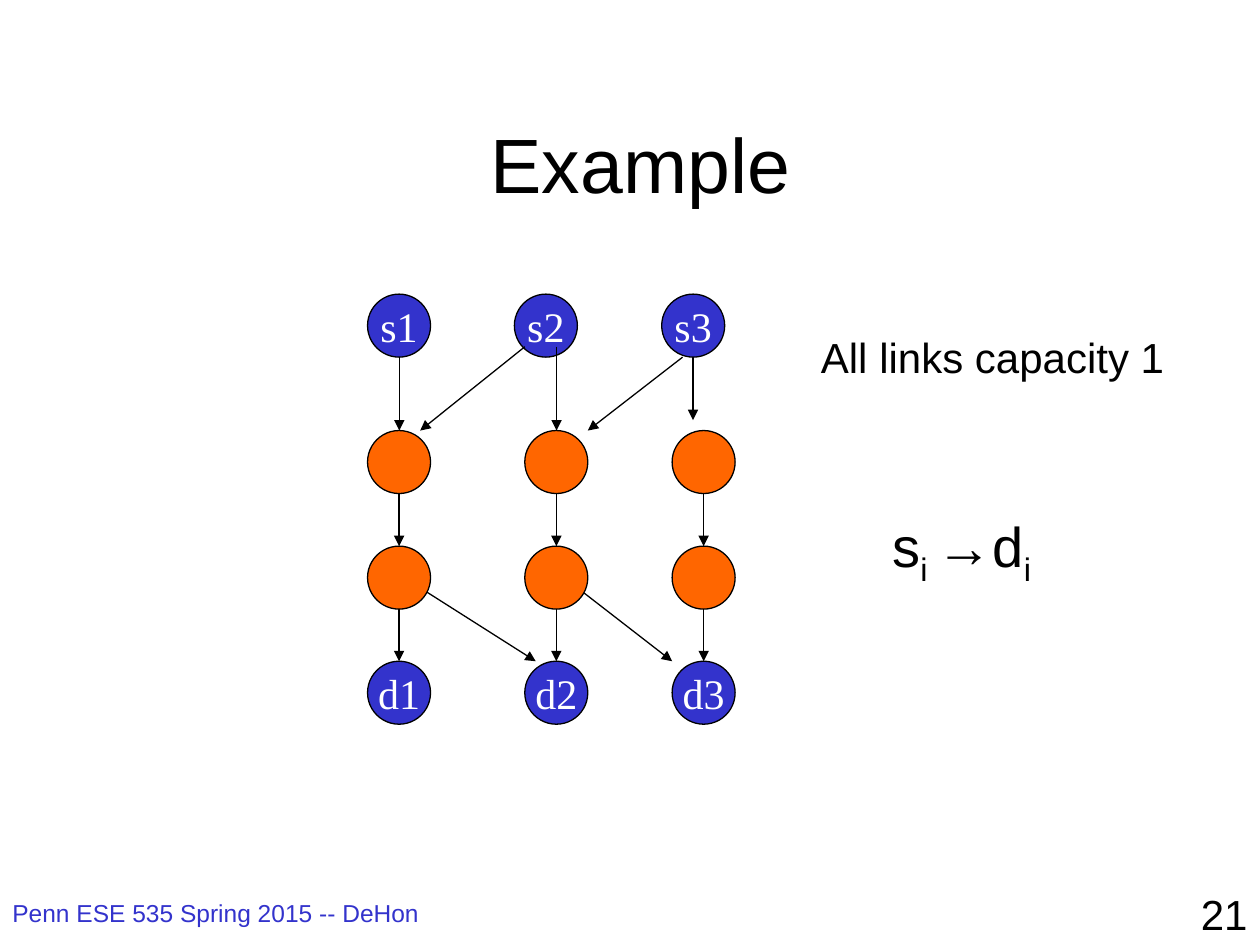
from lxml import etree
from pptx import Presentation
from pptx.dml.color import RGBColor
from pptx.enum.shapes import MSO_CONNECTOR, MSO_SHAPE
from pptx.enum.text import MSO_ANCHOR, PP_ALIGN
from pptx.oxml.ns import qn
from pptx.util import Cm, Pt

LEFT, CENTER, RIGHT = PP_ALIGN.LEFT, PP_ALIGN.CENTER, PP_ALIGN.RIGHT
TOP, MIDDLE = MSO_ANCHOR.TOP, MSO_ANCHOR.MIDDLE
OVAL, STRAIGHT = MSO_SHAPE.OVAL, MSO_CONNECTOR.STRAIGHT
BLACK = RGBColor(0x00, 0x00, 0x00)
WHITE = RGBColor(0xFF, 0xFF, 0xFF)
BLUE = RGBColor(0x33, 0x33, 0xCC)
ORANGE = RGBColor(0xFF, 0x66, 0x00)
SANS, SERIF = "Arial", "Times New Roman"
NORMAL, SUBSCRIPT = 0, -25000
DIAMETER = 1.27

TEXTS = [
    ((0, 17.98, 9.73, 1.07), [("Penn ESE 535 Spring 2015 -- DeHon", NORMAL)], 14, BLUE, LEFT, TOP, True),
    ((20.12, 17.78, 5.28, 1.27), [("21", NORMAL)], 24, BLACK, RIGHT, TOP, True),
    ((2.12, 1.69, 21.59, 3.18), [("Example", NORMAL)], 44, BLACK, CENTER, MIDDLE, True),
    ((16.3, 6.56, 7.43, 1.27), [("All links capacity 1", NORMAL)], 24, BLACK, LEFT, TOP, False),
    ((17.74, 10.19, 3.42, 1.6),
     [("s", NORMAL), ("i ", SUBSCRIPT), ("→d", NORMAL), ("i", SUBSCRIPT)], 32, BLACK, LEFT, TOP, False),
]

SOURCE_LEFTS = (7.41, 10.37, 13.34)
COLUMN_LEFTS = (7.41, 10.58, 13.55)
COLUMN_CENTERS = [left + DIAMETER / 2 for left in COLUMN_LEFTS]
SOURCE_TOP, UPPER_TOP, LOWER_TOP, SINK_TOP = 5.93, 8.68, 11.01, 13.33

SOURCE_LINKS = [
    ((8.05, 7.2), (8.05, 8.68)),
    ((10.58, 6.99), (8.47, 8.68)),
    ((11.22, 6.99), (11.22, 8.68)),
    ((13.76, 7.2), (11.85, 8.68)),
    ((13.97, 7.2), (13.97, 8.47)),
]
SINK_CROSS_LINKS = [
    ((8.47, 11.85), (10.8, 13.33)),
    ((11.64, 11.85), (13.55, 13.33)),
]


def straight_links(upper, lower):
    return [((x, upper + DIAMETER), (x, lower)) for x in COLUMN_CENTERS]


def add_span(para, text, size, font, color, baseline=NORMAL):
    span = para.add_run()
    span.text = text
    span.font.size = Pt(size)
    span.font.name = font
    span.font.color.rgb = color
    if baseline:
        span._r.get_or_add_rPr().set("baseline", str(baseline))


def add_text(page, place, spans, size, color, align, anchor, wrap):
    frame = page.shapes.add_textbox(*map(Cm, place)).text_frame
    frame.word_wrap = wrap
    frame.vertical_anchor = anchor
    para = frame.paragraphs[0]
    para.alignment = align
    for text, baseline in spans:
        add_span(para, text, size, SANS, color, baseline)


def add_nodes(page, lefts, top, color, prefix=""):
    for number, left in enumerate(lefts, 1):
        node = page.shapes.add_shape(OVAL, Cm(left), Cm(top), Cm(DIAMETER), Cm(DIAMETER))
        node.shadow.inherit = False
        node.fill.solid()
        node.fill.fore_color.rgb = color
        node.line.color.rgb = BLACK
        node.line.width = Pt(0.75)
        if prefix:
            frame = node.text_frame
            frame.word_wrap = False
            frame.vertical_anchor = MIDDLE
            para = frame.paragraphs[0]
            para.alignment = CENTER
            add_span(para, f"{prefix}{number}", 24, SERIF, WHITE)


def add_links(page, links):
    for start, end in links:
        link = page.shapes.add_connector(STRAIGHT, *map(Cm, start + end))
        link.line.color.rgb = BLACK
        link.line.width = Pt(0.75)
        etree.SubElement(link.line._get_or_add_ln(), qn("a:tailEnd"), type="triangle")
        etree.SubElement(link._element.spPr, qn("a:effectLst"))


def main():
    deck = Presentation()
    deck.slide_width, deck.slide_height = Cm(25.4), Cm(19.05)
    page = deck.slides.add_slide(deck.slide_layouts[6])
    for text in TEXTS:
        add_text(page, *text)
    add_nodes(page, SOURCE_LEFTS, SOURCE_TOP, BLUE, "s")
    add_nodes(page, COLUMN_LEFTS, UPPER_TOP, ORANGE)
    add_links(page, SOURCE_LINKS)
    add_nodes(page, COLUMN_LEFTS, SINK_TOP, BLUE, "d")
    add_links(page, straight_links(LOWER_TOP, SINK_TOP) + SINK_CROSS_LINKS)
    add_nodes(page, COLUMN_LEFTS, LOWER_TOP, ORANGE)
    add_links(page, straight_links(UPPER_TOP, LOWER_TOP))
    deck.save("out.pptx")


if __name__ == "__main__":
    main()
